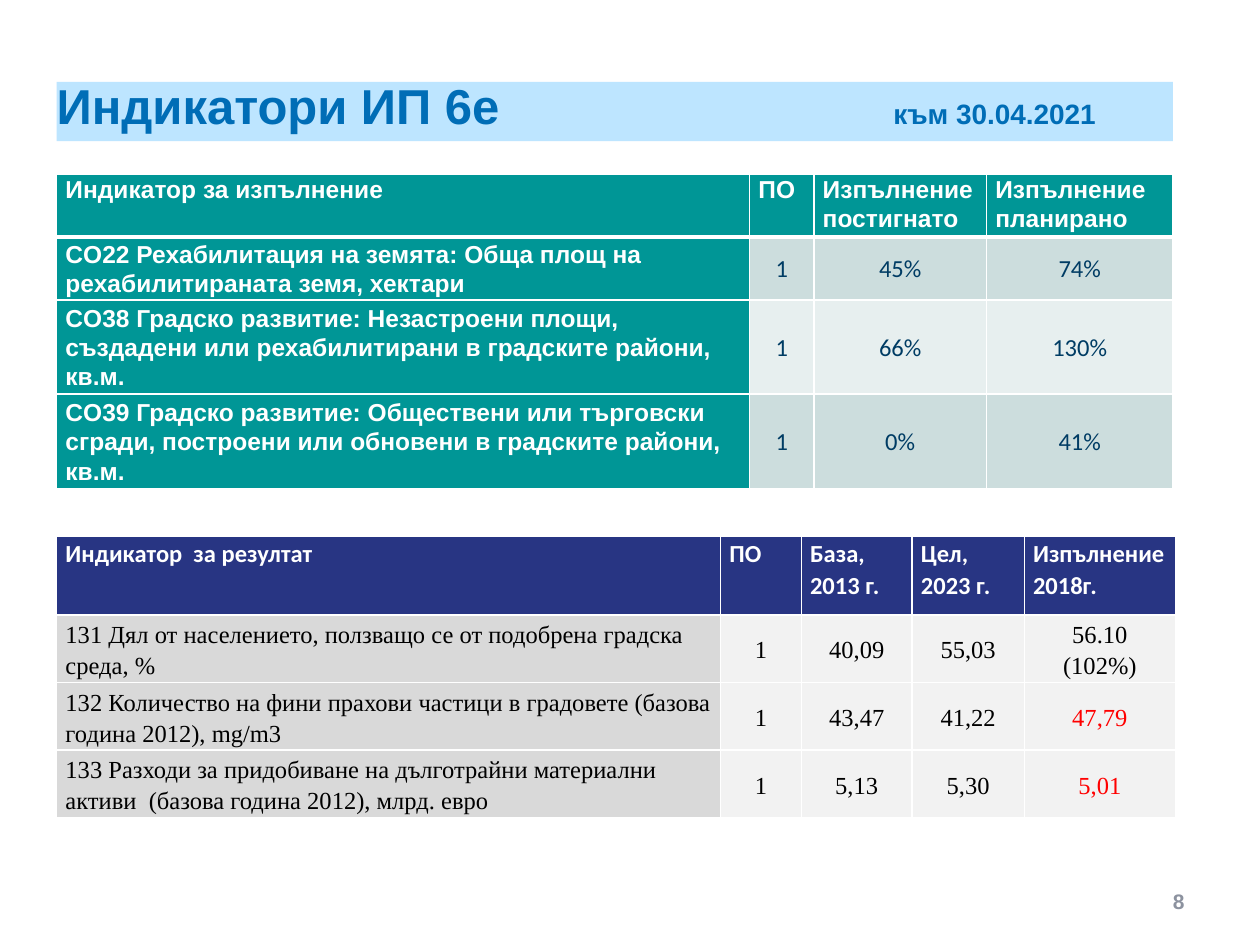
import pptx
import pptx.util
import pptx.dml.color
import pptx.enum.text
import pptx.oxml
import pptx.oxml.ns
from lxml import etree

Inches = pptx.util.Inches
Pt = pptx.util.Pt
ALIGN = pptx.enum.text.PP_ALIGN
ANCHOR = pptx.enum.text.MSO_ANCHOR
LEFT = 0.45

COLORS = {
    "band": "BDE5FF", "title": "006DB6", "number": "8C929F", "white": "FFFFFF",
    "teal": "009696", "mist": "CCDDDD", "pale": "E7EFEF", "ink": "003C64",
    "navy": "283583", "grey": "D9D9D9", "light": "F2F2F2", "black": "000000",
    "red": "FF0000",
}

OUTPUT_ROWS = [
    ["Индикатор за изпълнение", "ПО", "Изпълнение постигнато", "Изпълнение планирано"],
    ["CO22 Рехабилитация на земята: Обща площ на рехабилитираната земя, хектари",
     "1", "45%", "74%"],
    ["CO38 Градско развитие: Незастроени площи, създадени или рехабилитирани "
     "в градските райони, кв.м.", "1", "66%", "130%"],
    ["CO39 Градско развитие: Обществени или търговски сгради, построени или обновени "
     "в градските райони, кв.м.", "1", "0%", "41%"],
]
RESULT_ROWS = [
    ["Индикатор  за резултат", "ПО", "База, 2013 г.", "Цел, 2023 г.", "Изпълнение 2018г."],
    ["131 Дял от населението, ползващо се от подобрена градска среда, %",
     "1", "40,09", "55,03", "56.10 (102%)"],
    ["132 Количество на фини прахови частици в градовете (базова година 2012), mg/m3",
     "1", "43,47", "41,22", "47,79"],
    ["133 Разходи за придобиване на дълготрайни материални активи  "
     "(базова година 2012), млрд. евро", "1", "5,13", "5,30", "5,01"],
]
MISSED_TARGETS = {"47,79", "5,01"}


def rgb(name):
    return pptx.dml.color.RGBColor.from_string(COLORS[name])


def set_attrs(obj, values):
    for name, value in values.items():
        setattr(obj, name, value)


def add_run(p, text, size, font, color, bold=False):
    r = p.add_run()
    r.text = text
    set_attrs(r.font, {"size": Pt(size), "name": font, "bold": bold})
    r.font.color.rgb = rgb(color)


def add_title(s, heading, date):
    sp = s.shapes.title
    set_attrs(sp, {"left": Inches(LEFT), "top": Inches(0.65),
                   "width": Inches(8.86), "height": Inches(0.47)})
    sp.fill.solid()
    sp.fill.fore_color.rgb = rgb("band")
    tf = sp.text_frame
    set_attrs(tf, {"margin_left": 0, "margin_top": 0, "margin_right": 0,
                   "margin_bottom": 0, "word_wrap": True,
                   "auto_size": pptx.enum.text.MSO_AUTO_SIZE.NONE,
                   "vertical_anchor": ANCHOR.TOP})
    p = tf.paragraphs[0]
    set_attrs(p, {"alignment": ALIGN.LEFT, "line_spacing": Pt(30)})
    tabs = etree.SubElement(p._p.get_or_add_pPr(), pptx.oxml.ns.qn("a:tabLst"))
    etree.SubElement(tabs, pptx.oxml.ns.qn("a:tab"), pos=str(Inches(6.64)), algn="l")
    add_run(p, heading + "\t", 28, "Arial", "title", True)
    add_run(p, date, 16, "Arial", "title", True)


def add_page_number(s, number):
    sp = s.shapes.add_textbox(Inches(7.17), Inches(6.95), Inches(2.33), Inches(0.4))
    tf = sp.text_frame
    set_attrs(tf, {"word_wrap": True, "vertical_anchor": ANCHOR.MIDDLE})
    p = tf.paragraphs[0]
    p.alignment = ALIGN.RIGHT
    add_run(p, number, 12, "Arial", "number", True)


def set_borders(cell, top, bottom):
    tcPr = cell._tc.get_or_add_tcPr()
    for side, width in {"L": 1, "R": 1, "T": top, "B": bottom}.items():
        ln = etree.SubElement(tcPr, pptx.oxml.ns.qn("a:ln" + side), w=str(Pt(width)))
        fill = etree.SubElement(ln, pptx.oxml.ns.qn("a:solidFill"))
        etree.SubElement(fill, pptx.oxml.ns.qn("a:srgbClr"), val=COLORS["white"])


def fill_cell(cell, text, fmt):
    set_borders(cell, fmt["top"], fmt["bottom"])
    cell.fill.solid()
    cell.fill.fore_color.rgb = rgb(fmt["fill"])
    set_attrs(cell, {"margin_left": Inches(0.07), "margin_right": Inches(0.07),
                     "margin_top": 0, "margin_bottom": 0,
                     "vertical_anchor": fmt["anchor"]})
    p = cell.text_frame.paragraphs[0]
    set_attrs(p, {"alignment": fmt["align"], "line_spacing": fmt["spacing"]})
    add_run(p, text, 14, fmt["font"], fmt["color"], fmt["bold"])


def add_indicator_table(s, top, cols, heights, rows, cell_format):
    frame = s.shapes.add_table(len(rows), len(cols), Inches(LEFT), Inches(top),
                               Inches(sum(cols)), Inches(sum(heights)))
    table = frame.table
    for col, width in zip(table.columns, cols):
        col.width = Inches(width)
    for row, height in zip(table.rows, heights):
        row.height = Inches(height)
    for i, texts in enumerate(rows):
        for j, text in enumerate(texts):
            fmt = {"top": 1, "bottom": 1, "spacing": 1.07, "bold": i == 0,
                   "anchor": ANCHOR.MIDDLE if i else ANCHOR.TOP,
                   "align": ALIGN.JUSTIFY if i == 0 else ALIGN.CENTER if j else ALIGN.LEFT}
            fmt.update(cell_format(i, j, text))
            fill_cell(table.cell(i, j), text, fmt)


def output_format(i, j, text):
    fmt = {"top": 3 if i == 1 else 1, "bottom": 1 if i else 3}
    if i == 0 or j == 0:
        fmt.update(fill="teal", font="Arial", color="white", bold=True)
    else:
        fmt.update(fill="mist" if i % 2 else "pale", font="Calibri", color="ink")
    return fmt


def result_format(i, j, text):
    if i == 0:
        return {"fill": "navy", "font": "Calibri", "color": "white"}
    return {"fill": "light" if j else "grey", "font": "Times New Roman",
            "color": "red" if text in MISSED_TARGETS else "black", "spacing": 1.15}


def main():
    prs = pptx.Presentation()
    set_attrs(prs, {"slide_width": Inches(10), "slide_height": Inches(7.5)})
    s = prs.slides.add_slide(prs.slide_layouts[5])
    add_page_number(s, "8")
    add_title(s, "Индикатори ИП 6е", "към 30.04.2021")
    add_indicator_table(s, 1.38, [5.5, 0.51, 1.37, 1.48], [0.46, 0.47, 0.7, 0.7],
                        OUTPUT_ROWS, output_format)
    add_indicator_table(s, 4.26, [5.27, 0.64, 0.88, 0.89, 1.2], [0.62, 0.49, 0.49, 0.49],
                        RESULT_ROWS, result_format)
    prs.save("out.pptx")


if __name__ == "__main__":
    main()
